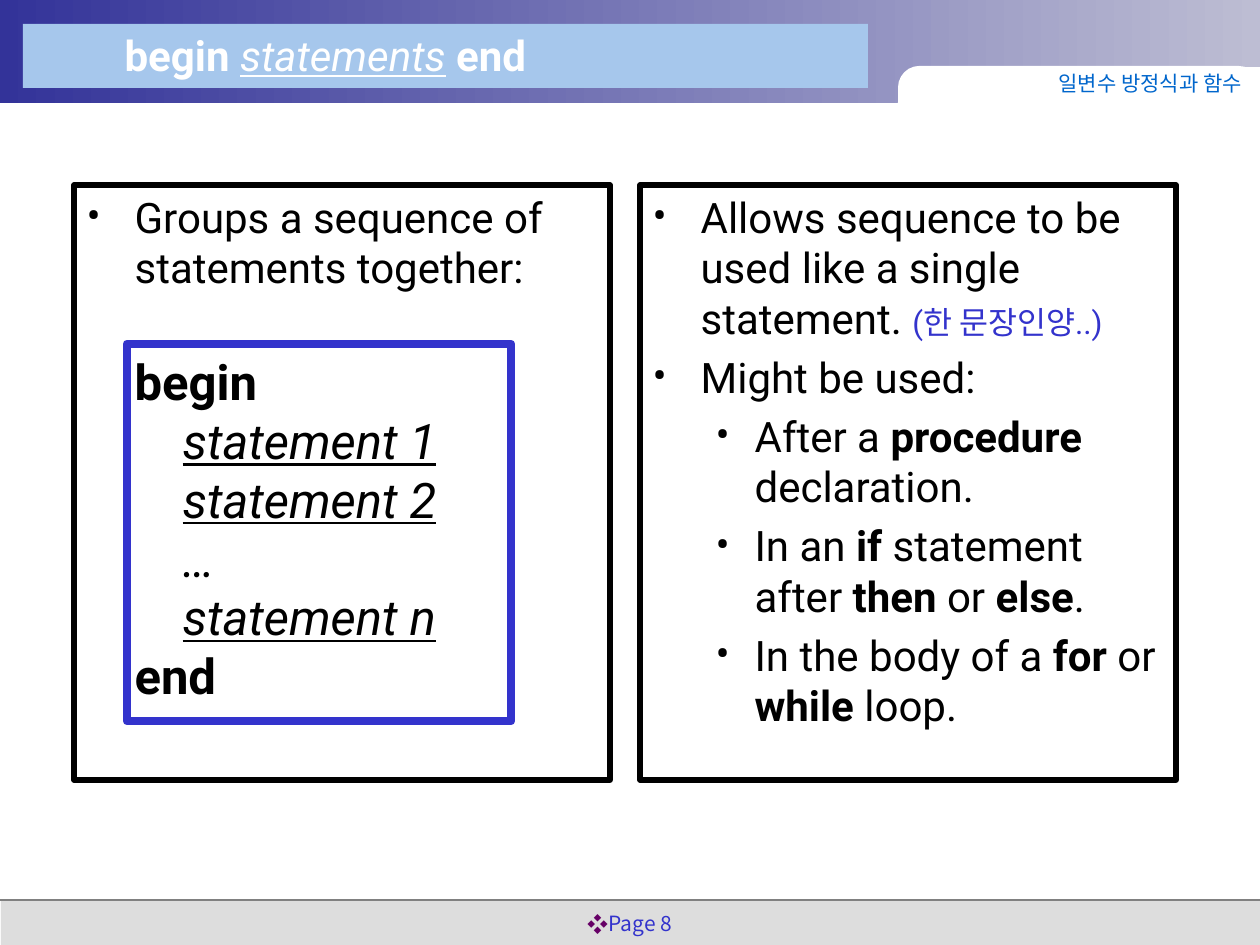
from dataclasses import dataclass

from lxml import etree
from pptx import Presentation
from pptx.dml.color import RGBColor
from pptx.enum.shapes import MSO_CONNECTOR, MSO_SHAPE
from pptx.enum.text import MSO_ANCHOR, MSO_AUTO_SIZE, PP_ALIGN
from pptx.oxml.ns import qn
from pptx.util import Emu, Pt

RECT, ROUND = MSO_SHAPE.RECTANGLE, MSO_SHAPE.ROUNDED_RECTANGLE
STRAIGHT = MSO_CONNECTOR.STRAIGHT
TOP, MIDDLE = MSO_ANCHOR.TOP, MSO_ANCHOR.MIDDLE
LEFT, CENTER, RIGHT = PP_ALIGN.LEFT, PP_ALIGN.CENTER, PP_ALIGN.RIGHT
FIXED = MSO_AUTO_SIZE.NONE
TWO_CONTENT = 3


@dataclass(frozen=True)
class Theme:
    latin: str = "Roboto"
    korean: str = "Noto Sans CJK KR"
    white: str = "FFFFFF"
    black: str = "000000"
    navy: str = "333399"
    lavender: str = "BDBDD3"
    sky: str = "A6C7EC"
    blue: str = "3333CC"
    link: str = "0066CC"
    purple: str = "660066"
    gray: str = "808080"
    pale: str = "DDDDDD"
    small: int = 12
    note: int = 18
    text: int = 24
    code: int = 28
    gap: int = 5


THEME = Theme()


def px(length):
    return Emu(round(length * 914400 / 126))


def rgb(color):
    return RGBColor.from_string(color)


def add_block(slide, box, fill=None, line=None, width=1, kind=RECT):
    block = slide.shapes.add_shape(kind, *map(px, box))
    block.shadow.inherit = False
    if fill:
        block.fill.solid()
        block.fill.fore_color.rgb = rgb(fill)
    else:
        block.fill.background()
    if line:
        block.line.color.rgb = rgb(line)
        block.line.width = Pt(width)
    else:
        block.line.fill.background()
    return block


def add_rule(slide, start, end):
    rule = slide.shapes.add_connector(STRAIGHT, *map(px, start + end))
    rule.line.color.rgb = rgb(THEME.gray)
    rule.line.width = Pt(1)
    etree.SubElement(rule.element.spPr, qn("a:effectLst"))


def set_indent(paragraph, left, hanging=0, bullet=None, color=None, font=None):
    props = paragraph._p.get_or_add_pPr()
    props.set("marL", str(px(left)))
    props.set("indent", str(-px(hanging)))
    if color:
        holder = etree.SubElement(props, qn("a:buClr"))
        etree.SubElement(holder, qn("a:srgbClr"), val=color)
    if font:
        etree.SubElement(props, qn("a:buFont"), typeface=font)
    if bullet:
        etree.SubElement(props, qn("a:buChar"), char=bullet)
    else:
        etree.SubElement(props, qn("a:buNone"))


def add_run(paragraph, text, style="", size=THEME.text, color=THEME.black,
            latin=THEME.latin):
    run = paragraph.add_run()
    run.text = text
    font = run.font
    font.name, font.size = latin, Pt(size)
    font.color.rgb = rgb(color)
    font.bold, font.italic, font.underline = (mark in style for mark in "biu")
    etree.SubElement(run._r.get_or_add_rPr(), qn("a:ea"), typeface=THEME.korean)


def next_paragraph(frame, before=THEME.gap):
    if not frame.paragraphs[0].runs:
        paragraph, before = frame.paragraphs[0], 0
    else:
        paragraph = frame.add_paragraph()
    paragraph.space_before = Pt(before)
    return paragraph


def add_bullet(frame, runs, level=0):
    paragraph = next_paragraph(frame)
    paragraph.level = level
    set_indent(paragraph, *((48, 48), (102, 39))[level], "•", font=THEME.latin)
    for text, *look in runs:
        add_run(paragraph, text, *look)


def add_code_line(frame, text, style, left, before):
    paragraph = next_paragraph(frame, before)
    set_indent(paragraph, left)
    add_run(paragraph, text, style, THEME.code)


def place(holder, box, anchor=TOP):
    holder.left, holder.top, holder.width, holder.height = map(px, box)
    holder.element.getparent().append(holder.element)
    frame = holder.text_frame
    frame.word_wrap, frame.auto_size = True, FIXED
    frame.vertical_anchor = anchor
    return frame


def place_panel(holder, box):
    holder.fill.solid()
    holder.fill.fore_color.rgb = rgb(THEME.white)
    holder.line.color.rgb = rgb(THEME.black)
    holder.line.width = Pt(3)
    return place(holder, box)


def add_label(slide, box, text, align, color, latin):
    frame = slide.shapes.add_textbox(*map(px, box)).text_frame
    paragraph = frame.paragraphs[0]
    paragraph.alignment = align
    add_run(paragraph, text, "", THEME.small, color, latin)
    return frame


def draw_backdrop(slide):
    add_block(slide, (1, 900, 1259, 45), THEME.pale)
    banner = add_block(slide, (0, 0, 1260, 103), THEME.navy)
    banner.fill.gradient()
    banner.fill.gradient_angle = 0
    for stop, color in zip(banner.fill.gradient_stops, (THEME.navy, THEME.lavender)):
        stop.color.rgb = rgb(color)
    add_rule(slide, (0, 900), (1260, 900))
    tab = add_block(slide, (898, 66, 362, 74), THEME.white, kind=ROUND)
    tab.adjustments[0] = 0.29
    add_block(slide, (1147, 67, 113, 30), THEME.white)
    add_block(slide, (23, 24, 845, 64), THEME.sky)


def draw_page_number(slide):
    frame = add_label(slide, (573, 907, 114, 35), "Page 8", CENTER, THEME.blue, THEME.korean)
    frame.word_wrap = True
    paragraph = frame.paragraphs[0]
    paragraph.line_spacing = 0.9
    set_indent(paragraph, 20, 20, "❖", THEME.purple, THEME.korean)


def draw_chapter(slide):
    frame = add_label(slide, (1036, 66, 211, 35), "일변수 방정식과 함수", RIGHT,
                      THEME.link, THEME.latin)
    frame.word_wrap, frame.vertical_anchor = False, MIDDLE
    frame.margin_left = frame.margin_right = px(5)
    frame.margin_top = frame.margin_bottom = px(5)


def fill_title(holder):
    paragraph = place(holder, (112, 23, 874, 63)).paragraphs[0]
    paragraph.alignment = LEFT
    for text, style in (("begin ", "b"), ("statements", "iu"), (" ", ""), ("end", "b")):
        add_run(paragraph, text, style, color=THEME.white)


def fill_syntax(frame):
    add_bullet(frame, [("Groups a sequence of statements together:",)])
    add_code_line(frame, "begin", "b", 48, 34)
    for text, style in (("statement 1", "iu"), ("statement 2", "iu"),
                        ("…", "i"), ("statement n", "iu")):
        add_code_line(frame, text, style, 96, 0)
    add_code_line(frame, "end", "b", 48, 0)


def fill_uses(frame):
    add_bullet(frame, [("Allows sequence to be used like a single statement. ",),
                       ("(한 문장인양..)", "", THEME.note, THEME.blue)])
    add_bullet(frame, [("Might be used:",)])
    for runs in (
        [("After a ",), ("procedure", "b"), (" declaration.",)],
        [("In an ",), ("if", "b"), (" statement after ",), ("then", "b"),
         (" or ",), ("else", "b"), (".",)],
        [("In the body of a ",), ("for", "b"), (" or ",), ("while", "b"), (" loop.",)],
    ):
        add_bullet(frame, runs, 1)


def main():
    deck = Presentation()
    deck.slide_width, deck.slide_height = px(1260), px(945)
    slide = deck.slides.add_slide(deck.slide_layouts[TWO_CONTENT])
    title, syntax, uses = slide.placeholders
    draw_backdrop(slide)
    draw_page_number(slide)
    fill_title(title)
    for column, (holder, fill) in enumerate(((syntax, fill_syntax), (uses, fill_uses))):
        fill(place_panel(holder, (74 + 566 * column, 185, 536, 595)))
    add_block(slide, (127, 344, 384, 377), line=THEME.blue, width=5)
    draw_chapter(slide)
    deck.save("out.pptx")


if __name__ == "__main__":
    main()
